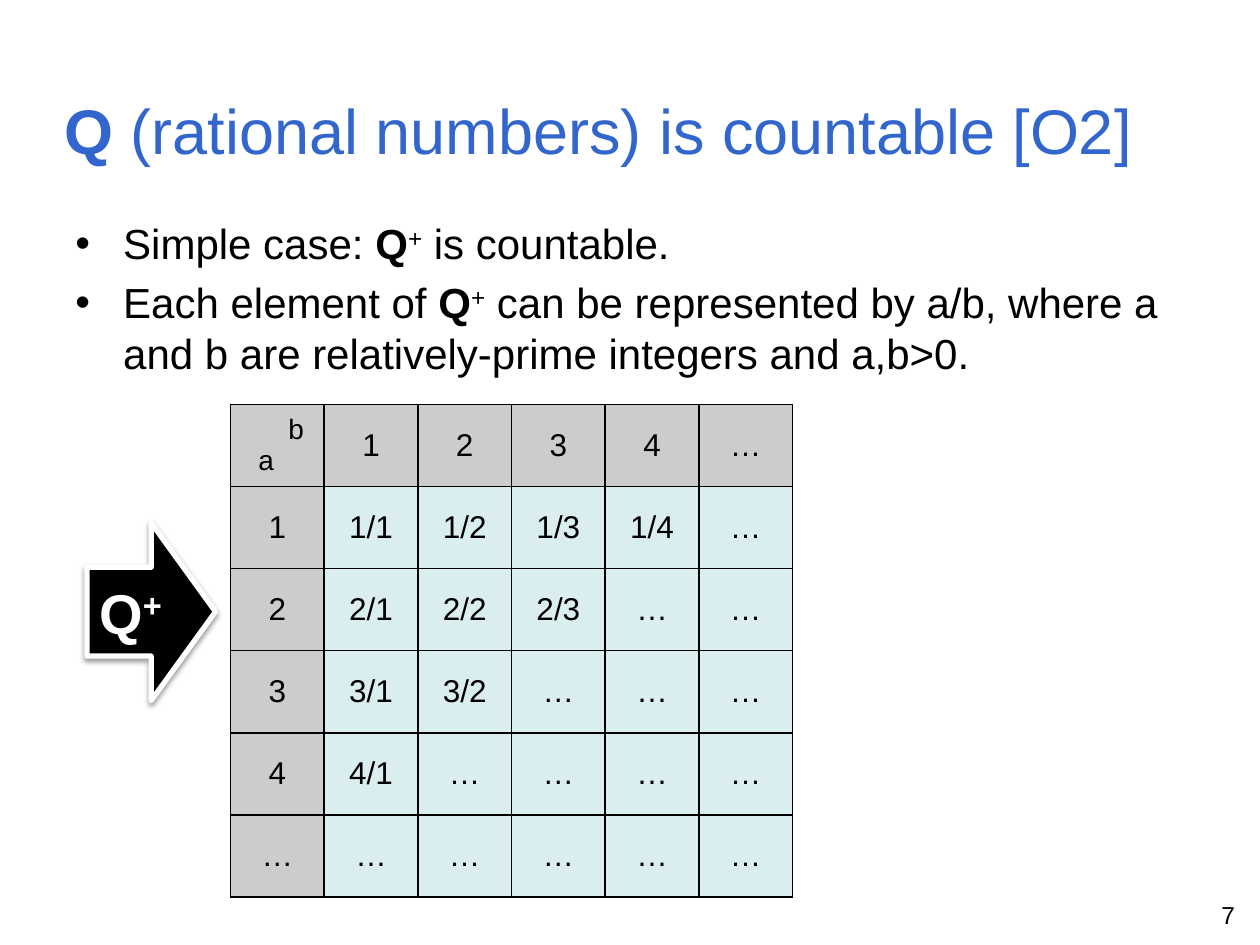
from dataclasses import dataclass

from lxml.etree import SubElement
from pptx import Presentation
from pptx.dml.color import RGBColor
from pptx.enum.shapes import MSO_SHAPE
from pptx.enum.text import MSO_ANCHOR, MSO_AUTO_SIZE, PP_ALIGN
from pptx.oxml.ns import qn
from pptx.util import Inches, Pt


@dataclass(frozen=True)
class Theme:
    font: str = "Arial"
    black: str = "000000"
    white: str = "FFFFFF"
    title_blue: str = "3366CC"
    header_gray: str = "CCCCCC"
    body_teal: str = "DAEDEF"
    title_size: int = 36
    arrow_size: int = 32
    body_size: int = 24
    cell_size: int = 18
    corner_size: int = 16
    number_size: int = 14


def apply_format(target, values):
    for name, value in values.items():
        setattr(target, name, value)


def box(left, top, width, height):
    return [Inches(length) for length in (left, top, width, height)]


class SlideBuilder:
    def __init__(self, presentation, theme):
        self.theme = theme
        self.slide = presentation.slides.add_slide(presentation.slide_layouts[5])

    def add_runs(self, paragraph, runs, size, color, align=PP_ALIGN.LEFT):
        paragraph.alignment = align
        for text, style in runs:
            run = paragraph.add_run()
            run.text = text
            apply_format(run.font, {
                "name": self.theme.font,
                "size": Pt(size),
                "bold": "bold" in style,
            })
            run.font.color.rgb = RGBColor.from_string(color)
            if "super" in style:
                run._r.get_or_add_rPr().set("baseline", "30000")

    def indent(self, paragraph, left, first=0):
        properties = paragraph._p.get_or_add_pPr()
        properties.set("marL", str(Inches(left)))
        properties.set("indent", str(Inches(first)))
        return properties

    def title(self, place, runs):
        title = self.slide.shapes.title
        apply_format(title, dict(zip(("left", "top", "width", "height"), place)))
        apply_format(title.text_frame, {
            "word_wrap": True,
            "auto_size": MSO_AUTO_SIZE.NONE,
            "vertical_anchor": MSO_ANCHOR.MIDDLE,
        })
        self.add_runs(title.text_frame.paragraphs[0], runs,
                      self.theme.title_size, self.theme.title_blue)

    def text_box(self, place):
        frame = self.slide.shapes.add_textbox(*place).text_frame
        frame.word_wrap = True
        return frame

    def bullets(self, place, items):
        frame = self.text_box(place)
        for index, runs in enumerate(items):
            paragraph = frame.add_paragraph() if index else frame.paragraphs[0]
            paragraph.space_before = Pt(self.theme.body_size * 0.2)
            self.add_runs(paragraph, runs, self.theme.body_size, self.theme.black)
            properties = self.indent(paragraph, 0.38, -0.38)
            SubElement(properties, qn("a:buFont"), typeface=self.theme.font)
            SubElement(properties, qn("a:buChar"), char="•")

    def slide_number(self, place, number):
        self.add_runs(self.text_box(place).paragraphs[0], [(number, "")],
                      self.theme.number_size, self.theme.black, PP_ALIGN.RIGHT)

    def border(self, cell):
        properties = cell._tc.get_or_add_tcPr()
        for index, side in enumerate(("lnL", "lnR", "lnT", "lnB")):
            line = SubElement(properties, qn(f"a:{side}"), w=str(Pt(1)))
            fill = SubElement(line, qn("a:solidFill"))
            SubElement(fill, qn("a:srgbClr"), val=self.theme.black)
            properties.insert(index, line)

    def table(self, place, rows):
        table = self.slide.shapes.add_table(len(rows), len(rows[0]), *place).table
        apply_format(table, {"first_row": False, "horz_banding": False})
        for row_index, row in enumerate(rows):
            for column_index, text in enumerate(row):
                cell = table.cell(row_index, column_index)
                inner = row_index and column_index
                cell.vertical_anchor = MSO_ANCHOR.MIDDLE
                cell.fill.solid()
                cell.fill.fore_color.rgb = RGBColor.from_string(
                    self.theme.body_teal if inner else self.theme.header_gray)
                self.border(cell)
                if text:
                    self.add_runs(cell.text_frame.paragraphs[0], [(text, "")],
                                  self.theme.cell_size, self.theme.black, PP_ALIGN.CENTER)
        return table

    def corner(self, cell, column_name, row_name):
        frame = cell.text_frame
        size, color = self.theme.corner_size, self.theme.black
        self.add_runs(frame.paragraphs[0], [(column_name, "")], size, color, PP_ALIGN.RIGHT)
        paragraph = frame.add_paragraph()
        self.add_runs(paragraph, [(row_name, "")], size, color)
        self.indent(paragraph, 0.12)

    def arrow(self, place, runs):
        shape = self.slide.shapes.add_shape(MSO_SHAPE.RIGHT_ARROW, *place)
        shape.fill.solid()
        shape.fill.fore_color.rgb = RGBColor.from_string(self.theme.black)
        shape.line.color.rgb = RGBColor.from_string(self.theme.white)
        shape.line.width = Pt(3)
        shape.shadow.inherit = False
        effects = shape._element.spPr.find(qn("a:effectLst"))
        shadow = SubElement(effects, qn("a:outerShdw"), blurRad=str(Pt(3.1)),
                            dist=str(Pt(1.6)), dir="5400000", rotWithShape="0")
        color = SubElement(shadow, qn("a:srgbClr"), val=self.theme.black)
        SubElement(color, qn("a:alpha"), val="38000")
        apply_format(shape.text_frame, {
            "word_wrap": True,
            "vertical_anchor": MSO_ANCHOR.MIDDLE,
        })
        self.add_runs(shape.text_frame.paragraphs[0], runs,
                      self.theme.arrow_size, self.theme.white)


def fraction_rows(limit):
    numbers = range(1, limit + 1)
    header = ["", *map(str, numbers), "…"]
    body = [
        [str(a), *(f"{a}/{b}" if a + b <= limit + 1 else "…" for b in numbers), "…"]
        for a in numbers
    ]
    return [header, *body, ["…"] * len(header)]


def main():
    presentation = Presentation()
    apply_format(presentation, {"slide_width": Inches(10), "slide_height": Inches(7.5)})
    builder = SlideBuilder(presentation, Theme())
    positive_rationals = [("Q", "bold"), ("+", "super")]

    builder.slide_number(box(7.57, 7.09, 2.33, 0.31), "7")
    builder.title(box(0.41, 0.6, 8.99, 0.86),
                  [("Q", "bold"), (" (rational numbers) is countable [O2]", "")])
    builder.bullets(box(0.5, 1.68, 9, 1.57), [
        [("Simple case: ", ""), *positive_rationals, (" is countable.", "")],
        [("Each element of ", ""), *positive_rationals,
         (" can be represented by a/b, where a and b are relatively-prime "
          "integers and a,b>0.", "")],
    ])
    table = builder.table(box(1.83, 3.21, 4.46, 3.91), fraction_rows(4))
    builder.corner(table.cell(0, 0), "b ", "a")
    builder.arrow(box(0.69, 4.15, 1.02, 1.41), [("Q", "bold"), ("+", "bold super")])
    presentation.save("out.pptx")


if __name__ == "__main__":
    main()
